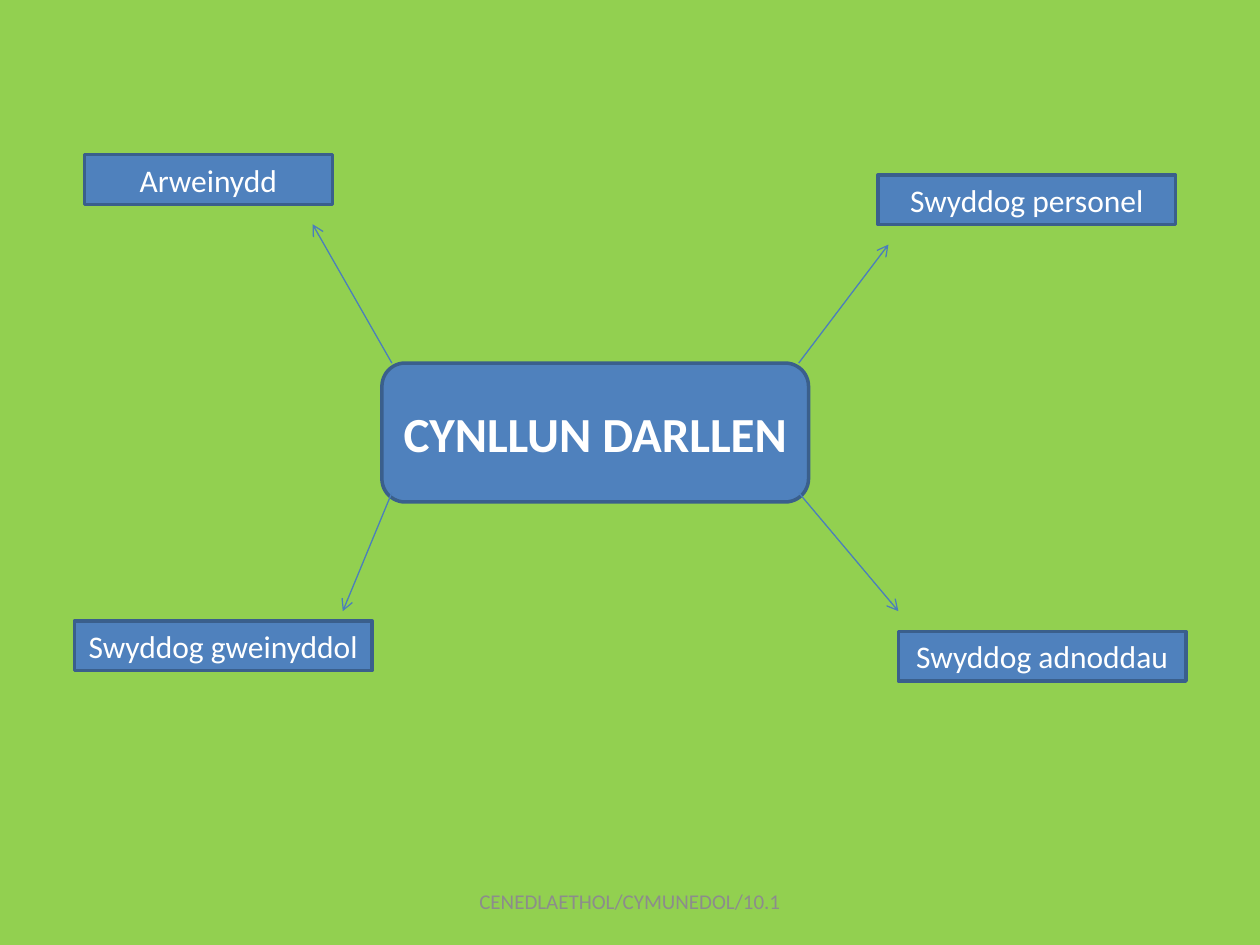
from typing import NamedTuple

from lxml import etree
from pptx import Presentation
from pptx import util as u
from pptx.dml.color import RGBColor
from pptx.enum import shapes, text
from pptx.oxml import ns

GREEN, BLUE, EDGE, ARROW = "92D050", "4F81BD", "3A5F8C", "4B7EBC"
WHITE, GREY = "FFFFFF", "8C8C8C"
LEFT, RIGHT, TOP, BOTTOM = 7.9, 16.1, 7.32, 9.93


class Role(NamedTuple):
    """An officer's box and the arrow that leads to it, in centimetres."""
    name: str
    left: float
    top: float
    width: float
    start: tuple[float, float]
    tip: tuple[float, float]


ROLES = [
    Role("Arweinydd", 1.7, 3.12, 5, (LEFT, TOP), (6.3, 4.52)),
    Role("Swyddog personel", 17.7, 3.53, 6, (RIGHT, TOP), (17.91, 4.93)),
    Role("Swyddog adnoddau", 18.11, 12.73, 5.8, (RIGHT, BOTTOM), (18.11, 12.32)),
    Role("Swyddog gweinyddol", 1.5, 12.52, 6, (LEFT, BOTTOM), (6.91, 12.32)),
]


def paint(fmt, colour: str) -> None:
    """Give a fill a solid colour."""
    fmt.solid()
    fmt.fore_color.rgb = RGBColor.from_string(colour)


def write(sp, words: str, *, size: float = 18, colour: str = WHITE, bold: bool = False) -> None:
    """Put one centred line of formatted text in a shape."""
    tf = sp.text_frame
    tf.word_wrap = True
    tf.vertical_anchor = text.MSO_ANCHOR.MIDDLE
    p = tf.paragraphs[0]
    p.alignment = text.PP_ALIGN.CENTER
    r = p.add_run()
    r.text = words
    r.font.name, r.font.size, r.font.bold = "Calibri", u.Pt(size), bold
    paint(r.font.fill, colour)


def add_box(s, kind, left: float, top: float, width: float, height: float):
    """Draw a blue outlined box."""
    sp = s.shapes.add_shape(kind, u.Cm(left), u.Cm(top), u.Cm(width), u.Cm(height))
    sp.shadow.inherit = False
    paint(sp.fill, BLUE)
    paint(sp.line.fill, EDGE)
    sp.line.width = u.Pt(2)
    return sp


def add_arrow(s, start: tuple[float, float], tip: tuple[float, float]) -> None:
    """Draw a thin line with an open arrowhead at its tip."""
    line = s.shapes.add_connector(
        shapes.MSO_CONNECTOR.STRAIGHT, *(u.Cm(v) for v in start + tip))
    paint(line.line.fill, ARROW)
    line.line.width = u.Pt(0.75)
    etree.SubElement(line.line.fill._xPr, ns.qn("a:tailEnd"), type="arrow")
    etree.SubElement(line._element.spPr, ns.qn("a:effectLst"))


def main() -> None:
    """Build the reading-plan slide and save it."""
    prs = Presentation()
    prs.slide_width, prs.slide_height = u.Cm(25.4), u.Cm(19.05)
    s = prs.slides.add_slide(prs.slide_layouts[6])
    paint(s.background.fill, GREEN)
    plan = add_box(s, shapes.MSO_SHAPE.ROUNDED_RECTANGLE, 7.7, TOP, 8.6, 2.8)
    write(plan, "CYNLLUN DARLLEN", size=28, bold=True)
    for role in ROLES:
        sp = add_box(s, shapes.MSO_SHAPE.RECTANGLE, role.left, role.top, role.width, 1)
        write(sp, role.name)
    for role in ROLES:
        add_arrow(s, role.start, role.tip)
    footer = s.shapes.add_textbox(u.Cm(8.68), u.Cm(17.66), u.Cm(8.04), u.Cm(1.01))
    write(footer, "CENEDLAETHOL/CYMUNEDOL/10.1", size=12, colour=GREY)
    prs.save("out.pptx")


if __name__ == "__main__":
    main()
